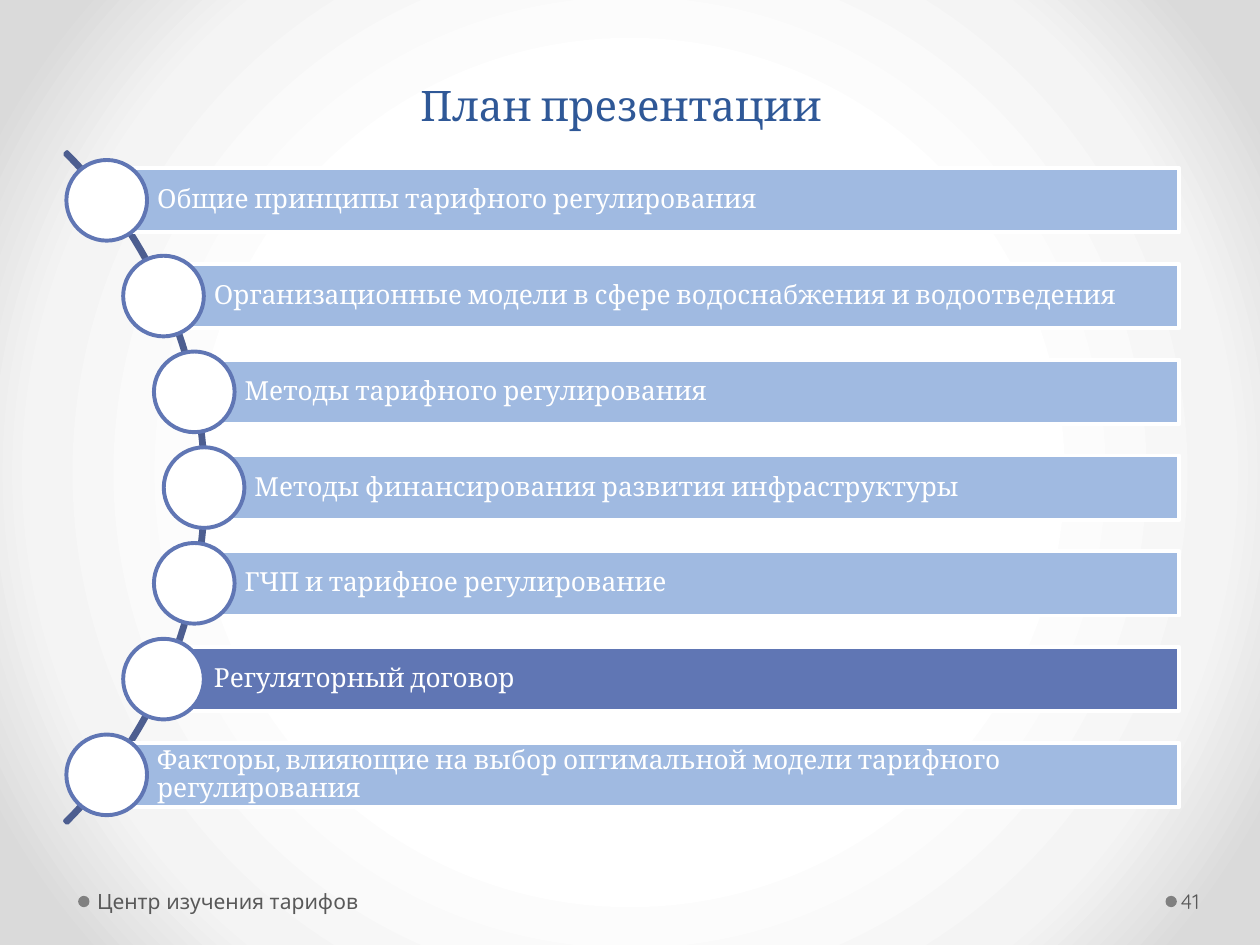
import math
import pptx
import pptx.dml.color
import pptx.enum.shapes
import pptx.enum.text
import pptx.oxml
import pptx.util

Inches, Pt = pptx.util.Inches, pptx.util.Pt
RGB = pptx.dml.color.RGBColor
KIND = pptx.enum.shapes.MSO_SHAPE
ALIGN = pptx.enum.text.PP_ALIGN
ANCHOR = pptx.enum.text.MSO_ANCHOR

WHITE = RGB(0xFF, 0xFF, 0xFF)
NAVY = RGB(0x2F, 0x58, 0x97)
BLUE = RGB(0x60, 0x76, 0xB4)
PALE = RGB(0xA0, 0xBA, 0xE1)
SLATE = RGB(0x4D, 0x5E, 0x90)
GRAY = RGB(0x80, 0x80, 0x80)
DARK = RGB(0x59, 0x59, 0x59)

NS = "http://schemas.openxmlformats.org/drawingml/2006/main"
STOPS = [(50, "FFFFFF"), (76, "F4F4F4"), (92, "DADADA")]


def draw(kind, box, fill, line=None):
    shape = slide.shapes.add_shape(kind, *map(Inches, box))
    shape.shadow.inherit = False
    shape.fill.solid()
    shape.fill.fore_color.rgb = fill
    if line is None:
        shape.line.fill.background()
    else:
        shape.line.color.rgb = line
        shape.line.width = Pt(2.25)
    return shape


def write(frame, text, font, size, color, pads, anchor=ANCHOR.MIDDLE, align=ALIGN.LEFT):
    frame.text = text
    frame.word_wrap = True
    frame.auto_size = pptx.enum.text.MSO_AUTO_SIZE.NONE
    frame.vertical_anchor = anchor
    (frame.margin_left, frame.margin_top,
     frame.margin_right, frame.margin_bottom) = map(Inches, pads)
    par = frame.paragraphs[0]
    par.alignment = align
    face = par.runs[0].font
    face.name, face.size, face.color.rgb = font, Pt(size), color
    return par


deck = pptx.Presentation()
deck.slide_width, deck.slide_height = Inches(10), Inches(7.5)
slide = deck.slides.add_slide(deck.slide_layouts[5])

# Background: white centre, grey corners
back = slide.background.fill
back.gradient()
grad = slide.background._cSld.find(f".//{{{NS}}}gradFill")
marks = "".join(f'<a:gs pos="{pos * 1000}"><a:srgbClr val="{tone}"/></a:gs>'
                for pos, tone in STOPS)
grad.getparent().replace(grad, pptx.oxml.parse_xml(
    f'<a:gradFill xmlns:a="{NS}" rotWithShape="1"><a:gsLst>{marks}</a:gsLst>'
    '<a:path path="circle"><a:fillToRect l="50000" t="50000" r="50000" b="50000"/>'
    '</a:path></a:gradFill>'))

# Title
title = slide.shapes.title
title.left, title.top, title.width, title.height = map(Inches, (0.43, 0.29, 9, 0.79))
par = write(title.text_frame, "План презентации", "Cambria", 24, NAVY,
            (0.1, 0.05, 0.1, 0.05), ANCHOR.BOTTOM, ALIGN.CENTER)
par.line_spacing = Pt(58)

# Arc behind the list
MID_X, MID_Y, RADIUS = -2.13, 3.87, 3.75
SPAN = 7.53
arc = draw(KIND.BLOCK_ARC, (MID_X - SPAN / 2, MID_Y - SPAN / 2, SPAN, SPAN), SLATE, SLATE)
for i, value in enumerate((189, 27, 0.003)):
    arc.adjustments[i] = value

# Bars start at the centres of circles that sit on the arc
TOPICS = [
    "Общие принципы тарифного регулирования",
    "Организационные модели в сфере водоснабжения и водоотведения",
    "Методы тарифного регулирования",
    "Методы финансирования развития инфраструктуры",
    "ГЧП и тарифное регулирование",
    "Регуляторный договор",
    "Факторы, влияющие на выбор оптимальной модели тарифного регулирования",
]
ACTIVE = 5
STEP = 0.76
BAR, DOT, RIGHT = 0.51, 0.64, 9.36
for i, topic in enumerate(TOPICS):
    rise = (i - len(TOPICS) // 2) * STEP
    x = MID_X + math.sqrt(RADIUS ** 2 - rise ** 2)
    y = MID_Y + rise
    bar = draw(KIND.RECTANGLE, (x, y - BAR / 2, RIGHT - x, BAR),
               BLUE if i == ACTIVE else PALE, WHITE)
    par = write(bar.text_frame, topic, "Cambria", 15, WHITE, (0.4, 0.04, 0.04, 0.04))
    par.line_spacing = 0.9
    draw(KIND.OVAL, (x - DOT / 2, y - DOT / 2, DOT, DOT), WHITE, BLUE)

# Footer and page number, each led by a dot
FOOT = [
    (0.62, 0.72, 3.11, "Центр изучения тарифов", (0.05, 0.05, 0.1, 0.05)),
    (9.25, 9.34, 0.61, "41", (0.03, 0.05, 0.05, 0.05)),
]
for dot, left, width, text, pads in FOOT:
    draw(KIND.OVAL, (dot, 7.11, 0.09, 0.09), GRAY)
    box = slide.shapes.add_textbox(*map(Inches, (left, 6.95, width, 0.4)))
    write(box.text_frame, text, "Quicksand", 12, DARK, pads)

deck.save("out.pptx")
